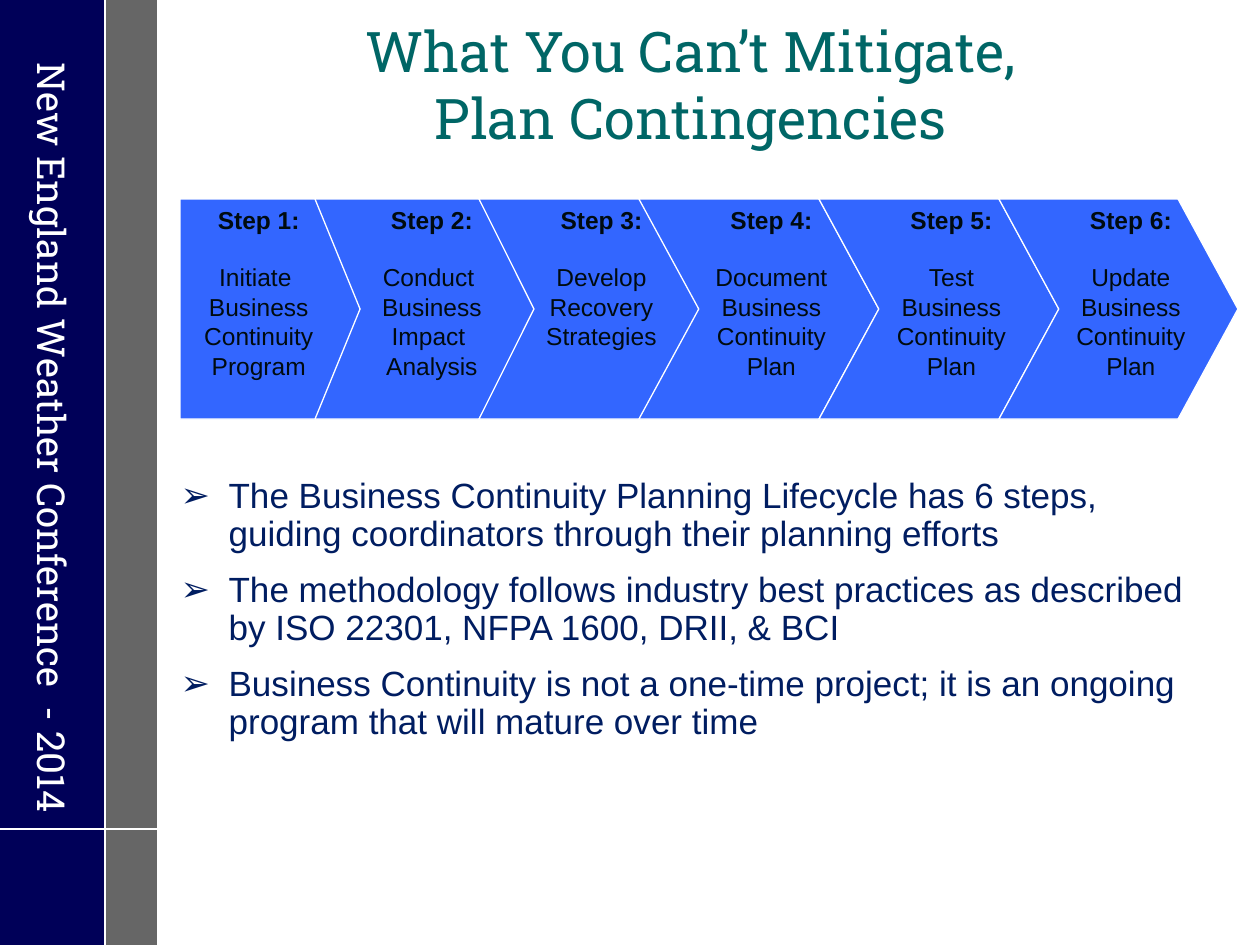
from dataclasses import dataclass

from lxml import etree
from pptx import Presentation
from pptx.dml.color import RGBColor
from pptx.enum.shapes import MSO_CONNECTOR, MSO_SHAPE
from pptx.enum.text import MSO_ANCHOR, MSO_AUTO_SIZE, PP_ALIGN
from pptx.oxml.ns import qn
from pptx.util import Pt

PX = 914400 // 126
RECT, CHEVRON, PENTAGON = MSO_SHAPE.RECTANGLE, MSO_SHAPE.CHEVRON, MSO_SHAPE.PENTAGON
LEFT, CENTER = PP_ALIGN.LEFT, PP_ALIGN.CENTER
TOP, MIDDLE, BOTTOM = MSO_ANCHOR.TOP, MSO_ANCHOR.MIDDLE, MSO_ANCHOR.BOTTOM
STRAIGHT = MSO_CONNECTOR.STRAIGHT
NO_FIT = MSO_AUTO_SIZE.NONE

WHITE, NAVY, GRAY, TEAL = "FFFFFF", "000058", "666666", "006666"
BLUE, INK, BODY_BLUE = "3366FF", "000B10", "001D61"
SERIF, SANS = "Roboto Slab", "Arial"
HANG = 48
STEP_TOP, STEP_HEIGHT = 199, 220


@dataclass
class Step:
    number: int
    left: int
    width: int
    point: float
    lines: list[str]


# Step 1 comes after step 2 because its tip lies over step 2's notch
STEPS = [
    Step(2, 300, 239, 0.272, ["Conduct ", "Business", "Impact ", "Analysis"]),
    Step(1, 180, 180, 0.25, ["Initiate ", "Business", "Continuity", "Program"]),
    Step(3, 479, 220, 0.25, ["Develop", "Recovery", "Strategies"]),
    Step(4, 639, 240, 0.272, ["Document", "Business", "Continuity", "Plan"]),
    Step(5, 819, 240, 0.272, ["Test", "Business", "Continuity", "Plan"]),
    Step(6, 999, 239, 0.272, ["Update", "Business", "Continuity", "Plan"]),
]
BULLETS = [
    "The Business Continuity Planning Lifecycle has 6 steps, "
    "guiding coordinators through their planning efforts",
    "The methodology follows industry best practices as described "
    "by ISO 22301, NFPA 1600, DRII, & BCI",
    "Business Continuity is not a one-time project; it is an ongoing "
    "program that will mature over time",
]


def rgb(color: str) -> RGBColor:
    return RGBColor.from_string(color)


def place(s, left: int, top: int, width: int, height: int) -> None:
    s.left, s.top, s.width, s.height = (v * PX for v in (left, top, width, height))


def style(p, size: int, font: str, color: str, bold: bool = False) -> None:
    for r in p.runs:
        r.font.size, r.font.name, r.font.bold = Pt(size), font, bold
        r.font.color.rgb = rgb(color)


def hang(p) -> None:
    pPr = p._p.get_or_add_pPr()
    pPr.set("marL", str(HANG * PX))
    pPr.set("indent", str(-HANG * PX))


def set_bullet(p, char: str, color: str) -> None:
    pPr = p._p.get_or_add_pPr()
    bu_color = etree.SubElement(pPr, qn("a:buClr"))
    etree.SubElement(bu_color, qn("a:srgbClr")).set("val", color)
    etree.SubElement(pPr, qn("a:buFont")).set("typeface", SANS)
    etree.SubElement(pPr, qn("a:buChar")).set("char", char)


def set_margins(tf, left: int, top: int, right: int, bottom: int) -> None:
    tf.margin_left, tf.margin_top = left * PX, top * PX
    tf.margin_right, tf.margin_bottom = right * PX, bottom * PX


def add_box(slide, kind, left: int, top: int, width: int, height: int, fill: str):
    s = slide.shapes.add_shape(kind, 0, 0, 0, 0)
    place(s, left, top, width, height)
    s.shadow.inherit = False
    s.fill.solid()
    s.fill.fore_color.rgb = rgb(fill)
    s.line.fill.background()
    return s


def set_line(line) -> None:
    line.color.rgb = rgb(WHITE)
    line.width = Pt(0.75)


def add_rule(slide, x1: int, y1: int, x2: int, y2: int) -> None:
    s = slide.shapes.add_connector(STRAIGHT, x1 * PX, y1 * PX, x2 * PX, y2 * PX)
    set_line(s.line)
    etree.SubElement(s._element.spPr, qn("a:effectLst"))


def add_step(slide, step: Step) -> None:
    first = step.number == 1
    s = add_box(slide, PENTAGON if first else CHEVRON,
                step.left, STEP_TOP, step.width, STEP_HEIGHT, BLUE)
    s.adjustments[0] = step.point
    set_line(s.line)
    tf = s.text_frame
    tf.word_wrap, tf.vertical_anchor = False, TOP
    set_margins(tf, 13 if first else 38, 6, 13, 6)
    for i, text in enumerate([f"Step {step.number}:"] + step.lines):
        p = tf.paragraphs[0] if i == 0 else tf.add_paragraph()
        p.text, p.alignment = text, CENTER
        style(p, 14, SANS, INK, bold=i == 0)
        if i == 0:
            p.space_after = Pt(16)
        if not first:
            hang(p)


def main() -> None:
    prs = Presentation()
    prs.slide_width, prs.slide_height = 1260 * PX, 945 * PX
    slide = prs.slides.add_slide(prs.slide_layouts[1])

    # Side band with the conference name
    band = add_box(slide, RECT, 0, 0, 105, 945, NAVY)
    tf = band.text_frame
    tf.text = "New England Weather Conference  - 2014"
    tf.word_wrap, tf.vertical_anchor = False, MIDDLE
    set_margins(tf, 0, 63, 0, 6)
    tf._txBody.bodyPr.set("vert", "eaVert")
    tf.paragraphs[0].alignment = LEFT
    style(tf.paragraphs[0], 22, SERIF, WHITE)
    add_box(slide, RECT, 105, 0, 52, 945, GRAY)
    add_rule(slide, 105, 945, 105, 0)
    add_rule(slide, 0, 829, 157, 829)

    # Title
    title = slide.shapes.title
    place(title, 179, 26, 1024, 131)
    tf = title.text_frame
    tf.text = "What You Can’t Mitigate,\vPlan Contingencies"
    tf.auto_size, tf.vertical_anchor = NO_FIT, BOTTOM
    tf.paragraphs[0].alignment = CENTER
    style(tf.paragraphs[0], 32, SERIF, TEAL)

    # Bullet list
    body = slide.placeholders[1]
    place(body, 168, 472, 1051, 420)
    tf = body.text_frame
    tf.auto_size, tf.vertical_anchor = NO_FIT, TOP
    for i, text in enumerate(BULLETS):
        p = tf.paragraphs[0] if i == 0 else tf.add_paragraph()
        p.text = text
        p.line_spacing, p.space_before = 0.9, Pt(10.5)
        hang(p)
        set_bullet(p, "➢", BODY_BLUE)
        style(p, 20, SANS, BODY_BLUE)

    # Lifecycle steps
    for step in STEPS:
        add_step(slide, step)

    prs.save("out.pptx")


if __name__ == "__main__":
    main()
